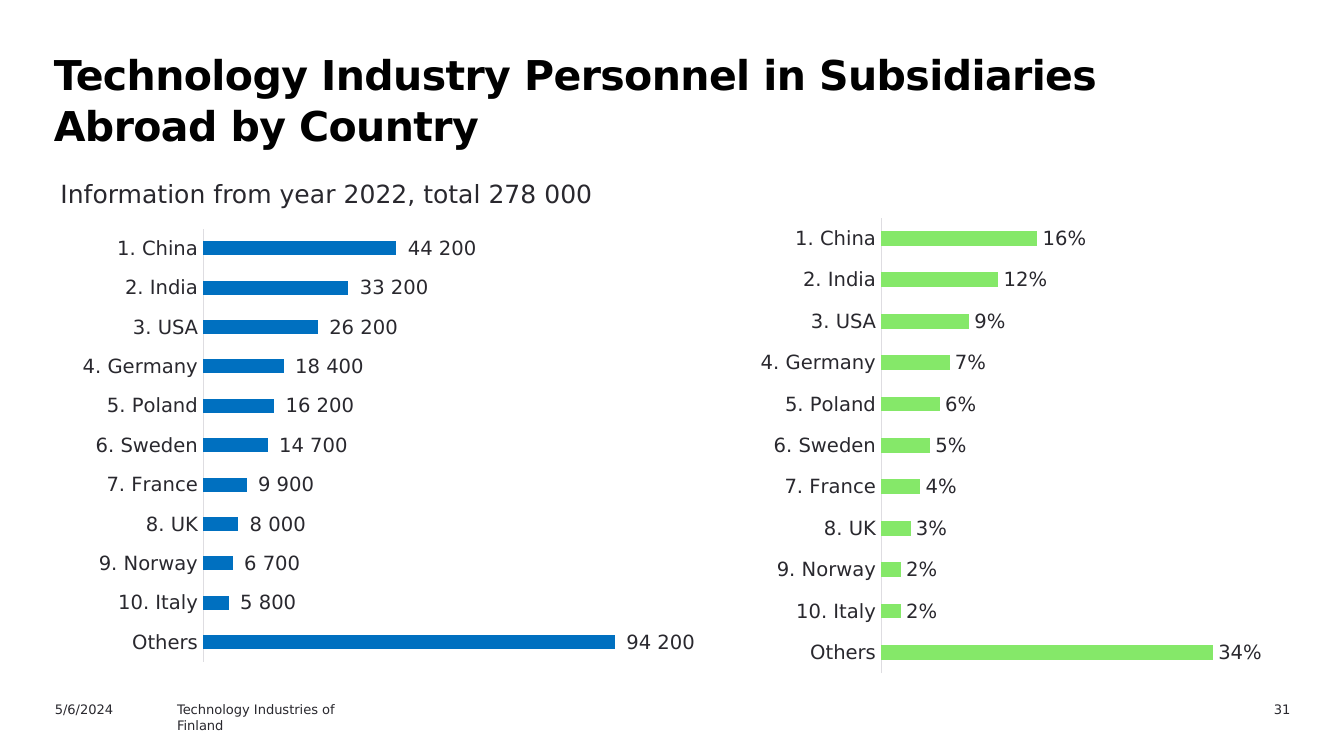
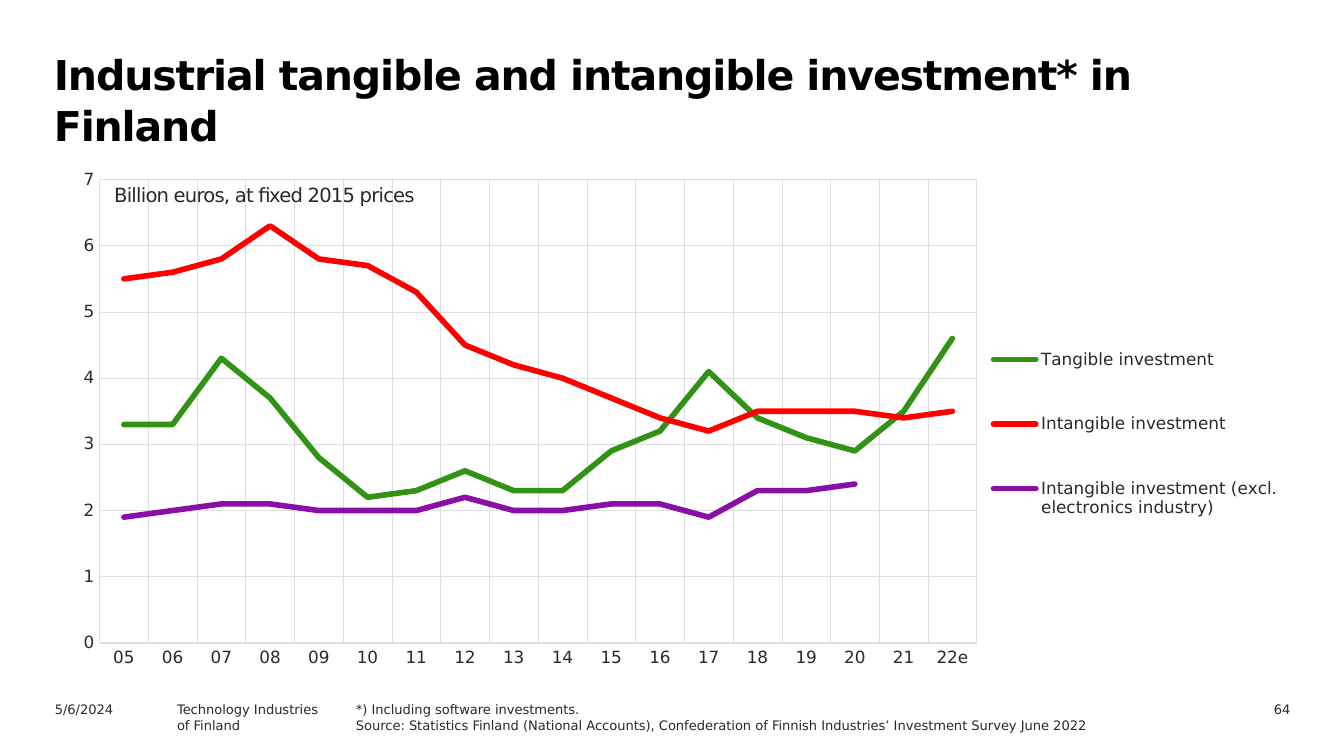
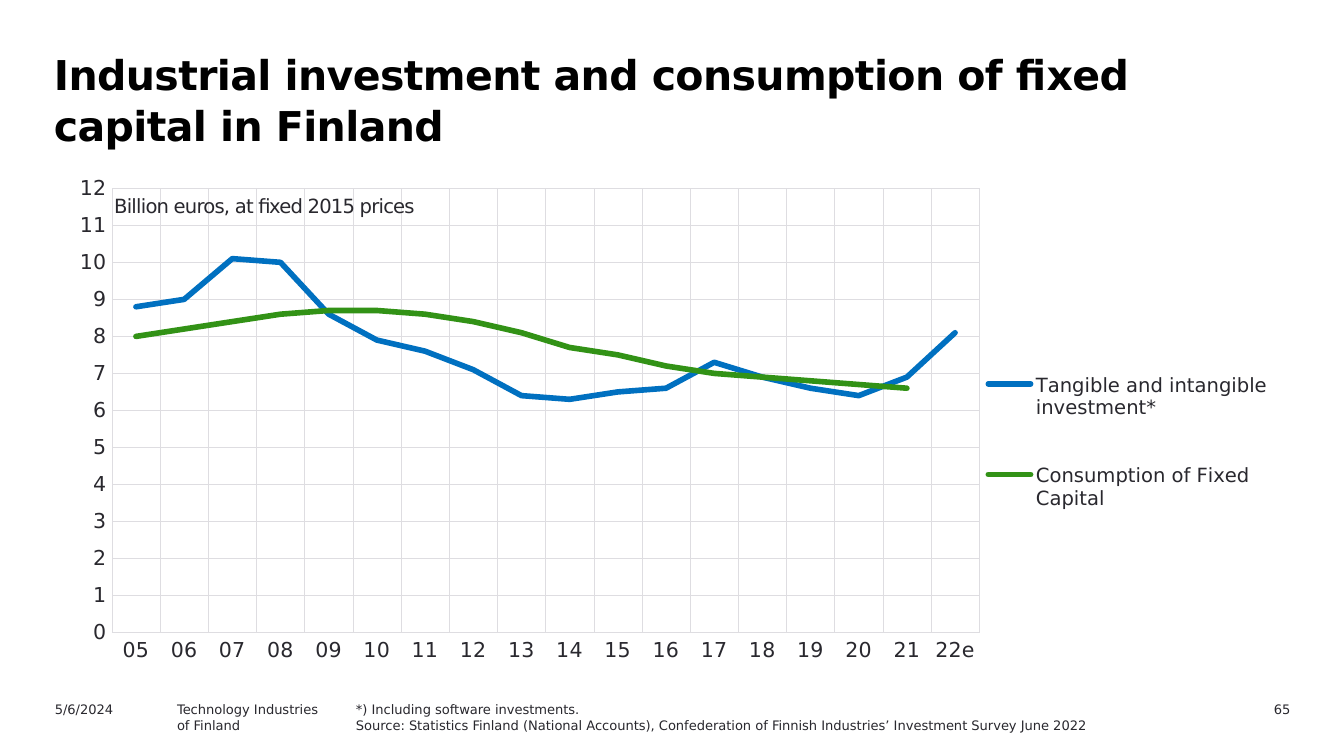
"""Build three slides on the technology industry: staff abroad and investment in Finland."""
from pptx import Presentation
from pptx import util as u
from pptx.chart import data as cd
from pptx.dml.color import RGBColor
from pptx.enum import chart as ch, text as tx
from pptx.oxml import parse_xml
from pptx.oxml.ns import nsdecls

INK = RGBColor(0x29, 0x28, 0x2E)
BLACK = RGBColor(0, 0, 0)
GRID = RGBColor(0xDE, 0xDD, 0xE1)
BLUE = RGBColor(0x00, 0x70, 0xC0)
LIME = RGBColor(0x85, 0xE8, 0x69)
GREEN = RGBColor(0x32, 0x92, 0x16)
RED = RGBColor(0xFF, 0, 0)
PLUM = RGBColor(0x8A, 0x0F, 0xA6)
FACE = "DejaVu Sans"
SPACED = r'_-* #\ ##0_-;\-* #\ ##0_-;_-* "-"??_-;_-'
NOTE = ["*) Including software investments.",
        "Source: Statistics Finland (National Accounts), Confederation of Finnish "
        "Industries’ Investment Survey June 2022"]
UNIT = "Billion euros, at fixed 2015 prices"
LANDS = ["Others", "10. Italy", "9. Norway", "8. UK", "7. France", "6. Sweden",
         "5. Poland", "4. Germany", "3. USA", "2. India", "1. China"]
YEARS = [f"{y:02}" for y in range(5, 22)] + ["22e"]


def write(shape, lines, size, inset=None, track=0, color=INK, bold=False, align=None):
    """Fill a text shape with evenly styled paragraphs."""
    frame = shape.text_frame
    form = {"word_wrap": True, "auto_size": tx.MSO_AUTO_SIZE.NONE,
            "vertical_anchor": tx.MSO_ANCHOR.TOP}
    if inset is not None:
        form |= {f"margin_{side}": u.Pt(inset) for side in ("left", "top", "right", "bottom")}
    for key, val in form.items():
        setattr(frame, key, val)
    frame.text = "\n".join(lines)
    for par in frame.paragraphs:
        par.alignment = align
        run = par.runs[0]
        for key, val in {"name": FACE, "size": u.Pt(size), "bold": bold}.items():
            setattr(run.font, key, val)
        run.font.color.rgb = color
        if track:
            run._r.get_or_add_rPr().set("spc", str(track))


def place(node, spot, box, inner=False):
    """Give a plot area or legend a fixed place, as shares of the chart."""
    for old in node.findall("{*}layout"):
        node.remove(old)
    parts = '<c:layoutTarget val="inner"/>' if inner else ""
    parts += '<c:xMode val="edge"/><c:yMode val="edge"/>'
    parts += "".join(f'<c:{tag} val="{val}"/>' for tag, val in zip("xywh", box))
    node.insert(spot, parse_xml(f'<c:layout {nsdecls("c")}><c:manualLayout>{parts}'
                                "</c:manualLayout></c:layout>"))


PAGES = [
    {"title": "Technology Industry Personnel in Subsidiaries Abroad by Country",
     "wide": 629, "track": -30, "page": "31",
     "org": ["Technology Industries of Finland"], "org_w": 102,
     "label": ("Information from year 2022, total 278 000", 13.4, 0, (29.5, 92.9, 371.5, 22.3)),
     "charts": [
         {"box": (30.2, 111.6, 350, 254.2), "size": 10.5, "cats": LANDS, "fmt": SPACED,
          "plot": (0.225, 0.043, 0.669, 0.913),
          "rows": [("Series 1", BLUE, [94200, 5800, 6700, 8000, 9900, 14700, 16200,
                                       18400, 26200, 33200, 44200])]},
         {"box": (401.8, 111.6, 285.1, 254.2), "size": 10.5, "cats": LANDS, "fmt": "0%",
          "rows": [("Series 1", LIME, [0.34, 0.02, 0.02, 0.03, 0.04, 0.05, 0.06,
                                       0.07, 0.09, 0.12, 0.16])]}]},
    {"title": "Industrial tangible and intangible investment* in Finland",
     "wide": 661, "track": -60, "page": "64",
     "org": ["Technology Industries", "of Finland"], "org_w": 129.6, "note_w": 488,
     "label": (UNIT, 10.5, -40, (58.3, 95, 402.5, 18.7)),
     "charts": [
         {"box": (30.2, 83.5, 661, 282.2), "size": 9, "cats": YEARS, "fmt": "#,##0", "top": 7,
          "plot": (0.035, 0.045, 0.711, 0.88), "key": (0.752, 0.283, 0.245, 0.49), "key_size": 9,
          "rows": [("Tangible investment", GREEN,
                    [3.3, 3.3, 4.3, 3.7, 2.8, 2.2, 2.3, 2.6, 2.3, 2.3, 2.9, 3.2, 4.1, 3.4,
                     3.1, 2.9, 3.5, 4.6]),
                   ("Intangible investment", RED,
                    [5.5, 5.6, 5.8, 6.3, 5.8, 5.7, 5.3, 4.5, 4.2, 4, 3.7, 3.4, 3.2, 3.5,
                     3.5, 3.5, 3.4, 3.5]),
                   ("Intangible investment (excl. electronics industry)", PLUM,
                    [1.9, 2, 2.1, 2.1, 2, 2, 2, 2.2, 2, 2, 2.1, 2.1, 1.9, 2.3, 2.3, 2.4,
                     None, None])]}]},
    {"title": "Industrial investment and consumption of fixed capital in Finland",
     "wide": 635, "track": -30, "page": "65",
     "org": ["Technology Industries", "of Finland"], "org_w": 129.6, "note_w": 471,
     "label": (UNIT, 10.5, -40, (58.3, 100.8, 238.3, 18.7)),
     "charts": [
         {"box": (30.2, 89.3, 661, 276.5), "size": 11, "cats": YEARS, "fmt": "#,##0", "top": 12,
          "plot": (0.045, 0.042, 0.703, 0.861), "key": (0.746, 0.313, 0.245, 0.44),
          "key_size": 10.5,
          "rows": [("Tangible and intangible investment*", BLUE,
                    [8.8, 9, 10.1, 10, 8.6, 7.9, 7.6, 7.1, 6.4, 6.3, 6.5, 6.6, 7.3, 6.9,
                     6.6, 6.4, 6.9, 8.1]),
                   ("Consumption of Fixed Capital", GREEN,
                    [8, 8.2, 8.4, 8.6, 8.7, 8.7, 8.6, 8.4, 8.1, 7.7, 7.5, 7.2, 7, 6.9,
                     6.8, 6.7, 6.6, None])]}]},
]

deck = Presentation()
deck.slide_width, deck.slide_height = u.Pt(720), u.Pt(405)

for page in PAGES:
    slide = deck.slides.add_slide(deck.slide_layouts[5])
    head = slide.shapes.title
    for key, val in {"left": 20.2, "top": 22.3, "width": page["wide"], "height": 56}.items():
        setattr(head, key, u.Pt(val))
    write(head, [page["title"]], 22, None, page["track"], BLACK, True, tx.PP_ALIGN.LEFT)
    par = head.text_frame.paragraphs[0]
    par.line_spacing = u.Pt(27)
    par._p.get_or_add_pPr().set("marL", str(u.Pt(1.44)))

    for spec_ in page["charts"]:
        line = "top" in spec_
        data = cd.CategoryChartData(number_format=spec_["fmt"])
        data.categories = spec_["cats"]
        for name, _, vals in spec_["rows"]:
            data.add_series(name, vals)
        kind = ch.XL_CHART_TYPE.LINE if line else ch.XL_CHART_TYPE.BAR_CLUSTERED
        chart = slide.shapes.add_chart(kind, *map(u.Pt, spec_["box"]), data).chart
        chart.has_title = False
        chart.has_legend = line
        plot, cat, val_ax = chart.plots[0], chart.category_axis, chart.value_axis
        plot.vary_by_categories = False
        fonts = [(chart.font, spec_["size"]), (cat.tick_labels.font, spec_["size"])]
        for axis in (cat, val_ax):
            axis.major_tick_mark = axis.minor_tick_mark = ch.XL_TICK_MARK.NONE
            axis.has_major_gridlines = line
            if line:
                rule = axis.major_gridlines.format.line
                rule.color.rgb, rule.width = GRID, u.Pt(0.25)
        cat.format.line.color.rgb = GRID
        cat.format.line.width = u.Pt(0.75)
        labels = val_ax.tick_labels
        if line:
            form = {"minimum_scale": 0, "maximum_scale": spec_["top"], "major_unit": 1}
            for key, val in form.items():
                setattr(val_ax, key, val)
            val_ax.format.line.fill.background()
            legend = chart.legend
            legend.position = ch.XL_LEGEND_POSITION.RIGHT
            legend.include_in_layout = False
            place(legend._element, 1, spec_["key"])
            fonts += [(labels.font, spec_["size"]), (legend.font, spec_["key_size"])]
        else:
            val_ax.visible = False
            plot.gap_width = 182
            plot.has_data_labels = True
            labels = plot.data_labels
            labels.show_value = True
            labels.position = ch.XL_LABEL_POSITION.OUTSIDE_END
            fonts.append((labels.font, spec_["size"]))
        labels.number_format = spec_["fmt"]
        labels.number_format_is_linked = False
        for font, size in fonts:
            font.name, font.size = FACE, u.Pt(size)
            font.color.rgb = INK
        for row, (_, color, _) in zip(plot.series, spec_["rows"]):
            if line:
                row.smooth = False
                row.format.line.color.rgb = color
                row.format.line.width = u.Pt(3)
                row.format.line._get_or_add_ln().set("cap", "rnd")
            else:
                row.format.fill.solid()
                row.format.fill.fore_color.rgb = color
        if "plot" in spec_:
            place(chart._chartSpace.chart.plotArea, 0, spec_["plot"], True)

    words, size, track, box = page["label"]
    write(slide.shapes.add_textbox(*map(u.Pt, box)), [words], size, 2.88, track)
    feet = [(22.3, 72, ["5/6/2024"], None), (87.8, page["org_w"], page["org"], None),
            (630.7, 67.7, [page["page"]], tx.PP_ALIGN.RIGHT)]
    if "note_w" in page:
        feet.append((183.6, page["note_w"], NOTE, None))
    for left, wide, lines, align in feet:
        box = slide.shapes.add_textbox(u.Pt(left), u.Pt(372.2), u.Pt(wide),
                                       u.Pt(24.5 if lines is NOTE else 13))
        write(box, lines, 7, align=align)

deck.save("out.pptx")
